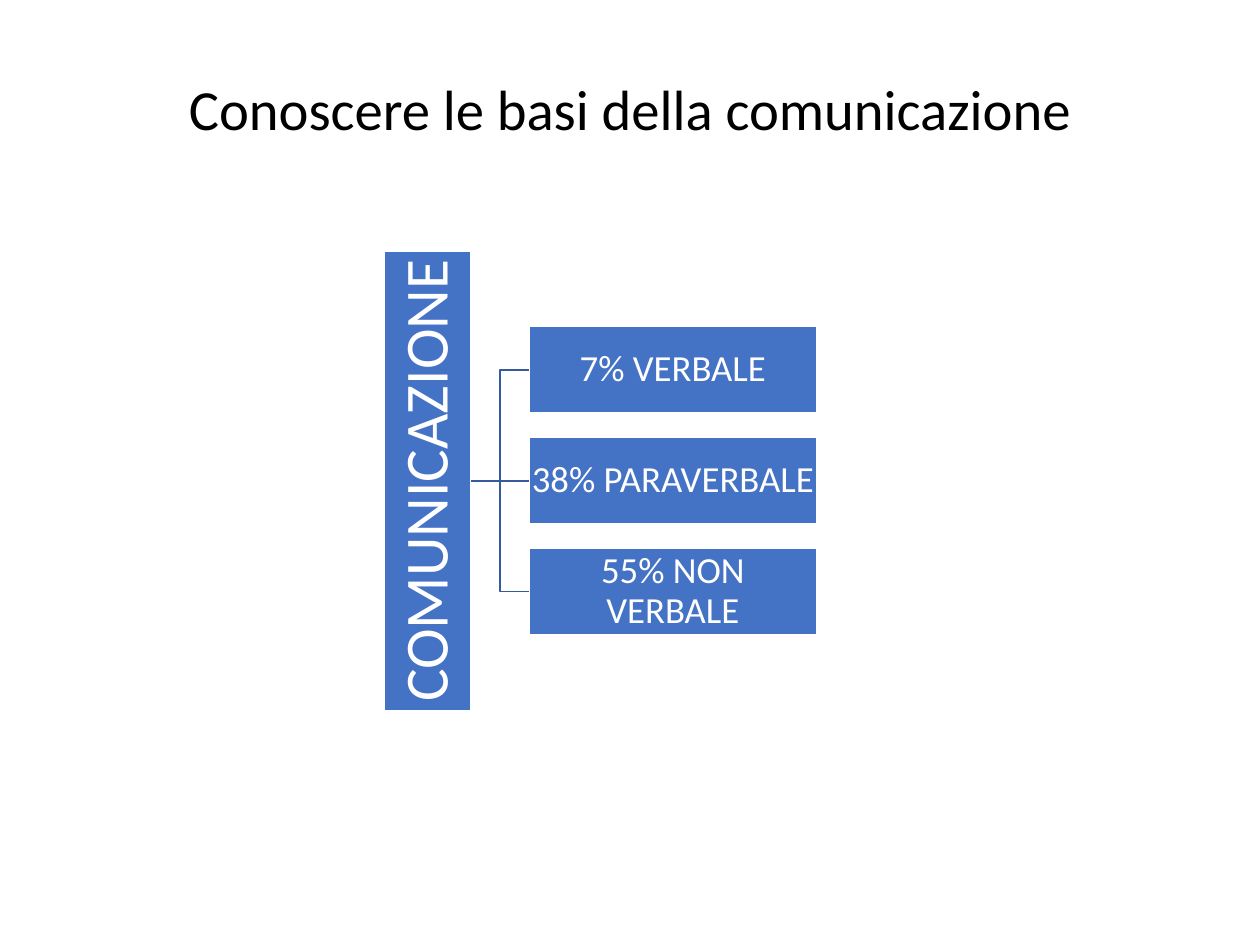
from dataclasses import dataclass

from lxml import etree
from pptx import Presentation
from pptx.dml.color import RGBColor
from pptx.enum.shapes import MSO_CONNECTOR, MSO_SHAPE
from pptx.enum.text import MSO_ANCHOR, PP_ALIGN
from pptx.oxml.ns import qn
from pptx.util import Inches, Pt

RECTANGLE = MSO_SHAPE.RECTANGLE
STRAIGHT, ELBOW = MSO_CONNECTOR.STRAIGHT, MSO_CONNECTOR.ELBOW
TOP, MIDDLE = MSO_ANCHOR.TOP, MSO_ANCHOR.MIDDLE
CENTER = PP_ALIGN.CENTER
LEFT_SIDE, BOTTOM_SIDE = 1, 2
COLUMNS, ROWS = 100, 75


@dataclass(frozen=True)
class Theme:
    """Colours, font and type sizes of the slide."""
    ink: RGBColor = RGBColor(0x00, 0x00, 0x00)
    paper: RGBColor = RGBColor(0xFF, 0xFF, 0xFF)
    box: RGBColor = RGBColor(0x44, 0x72, 0xC4)
    branch: RGBColor = RGBColor(0x36, 0x5B, 0x9D)
    font: str = "Calibri"
    title_size: float = 32.4
    root_size: float = 35
    leaf_size: float = 21
    line_width: float = 1


def write(shape, text, *, font, size, color, anchor=MIDDLE, inset=0):
    """Put one centred paragraph into a shape."""
    frame = shape.text_frame
    frame.word_wrap = True
    frame.vertical_anchor = anchor
    frame.margin_left = frame.margin_right = Inches(inset)
    frame.margin_top = frame.margin_bottom = Inches(inset)
    paragraph = frame.paragraphs[0]
    paragraph.alignment = CENTER
    paragraph.line_spacing = 0.9
    run = paragraph.add_run()
    run.text = text
    run.font.name = font
    run.font.size = Pt(size)
    run.font.color.rgb = color


class SlideBuilder:
    """Draws titles, boxes and branches on a grid of columns and rows."""

    def __init__(self, presentation, theme):
        """Add a blank slide and measure its grid."""
        self.theme = theme
        self.slide = presentation.slides.add_slide(presentation.slide_layouts[6])
        self.column = presentation.slide_width / COLUMNS
        self.row = presentation.slide_height / ROWS

    def area(self, left, top, width, height):
        """Turn grid units into slide lengths."""
        return (round(left * self.column), round(top * self.row),
                round(width * self.column), round(height * self.row))

    def title(self, text, *place):
        """Add the heading."""
        heading = self.slide.shapes.add_textbox(*self.area(*place))
        write(heading, text, font=self.theme.font, size=self.theme.title_size,
              color=self.theme.ink, anchor=TOP)

    def box(self, text, *place, size, inset, rotation=0):
        """Add a filled box with its label."""
        node = self.slide.shapes.add_shape(RECTANGLE, *self.area(*place))
        node.rotation = rotation
        node.shadow.inherit = False
        node.fill.solid()
        node.fill.fore_color.rgb = self.theme.box
        node.line.color.rgb = self.theme.paper
        node.line.width = Pt(self.theme.line_width)
        write(node, text, font=self.theme.font, size=size,
              color=self.theme.paper, inset=inset)
        return node

    def branch(self, root, leaf):
        """Join the right edge of the upright root to the left side of a leaf."""
        start_x = root.left + (root.width + root.height) // 2
        start_y = root.top + root.height // 2
        leaf_y = leaf.top + leaf.height // 2
        kind = STRAIGHT if abs(start_y - leaf_y) < self.row / 10 else ELBOW
        link = self.slide.shapes.add_connector(kind, start_x, start_y, leaf.left, leaf_y)
        link.begin_connect(root, BOTTOM_SIDE)
        link.end_connect(leaf, LEFT_SIDE)
        link.begin_x, link.begin_y = start_x, start_y
        link.line.color.rgb = self.theme.branch
        link.line.width = Pt(self.theme.line_width)
        etree.SubElement(link._element.spPr, qn("a:effectLst"))


def main():
    """Build the slide and save it."""
    presentation = Presentation()
    presentation.slide_width, presentation.slide_height = Inches(10), Inches(7.5)
    theme = Theme()
    builder = SlideBuilder(presentation, theme)
    builder.title("Conoscere le basi della comunicazione", 6.9, 6.5, 86.2, 10.1)

    thickness, first_leaf, pitch = 6.9, 25.9, 8.8
    root = builder.box("COMUNICAZIONE", 15.7, first_leaf + pitch, 36.5, thickness,
                       size=theme.root_size, inset=0.02, rotation=270)
    for index, share in enumerate(("7% VERBALE", "38% PARAVERBALE", "55% NON VERBALE")):
        leaf = builder.box(share, 42, first_leaf + index * pitch, 22.8, thickness,
                           size=theme.leaf_size, inset=0.01)
        builder.branch(root, leaf)

    presentation.save("out.pptx")


if __name__ == "__main__":
    main()
